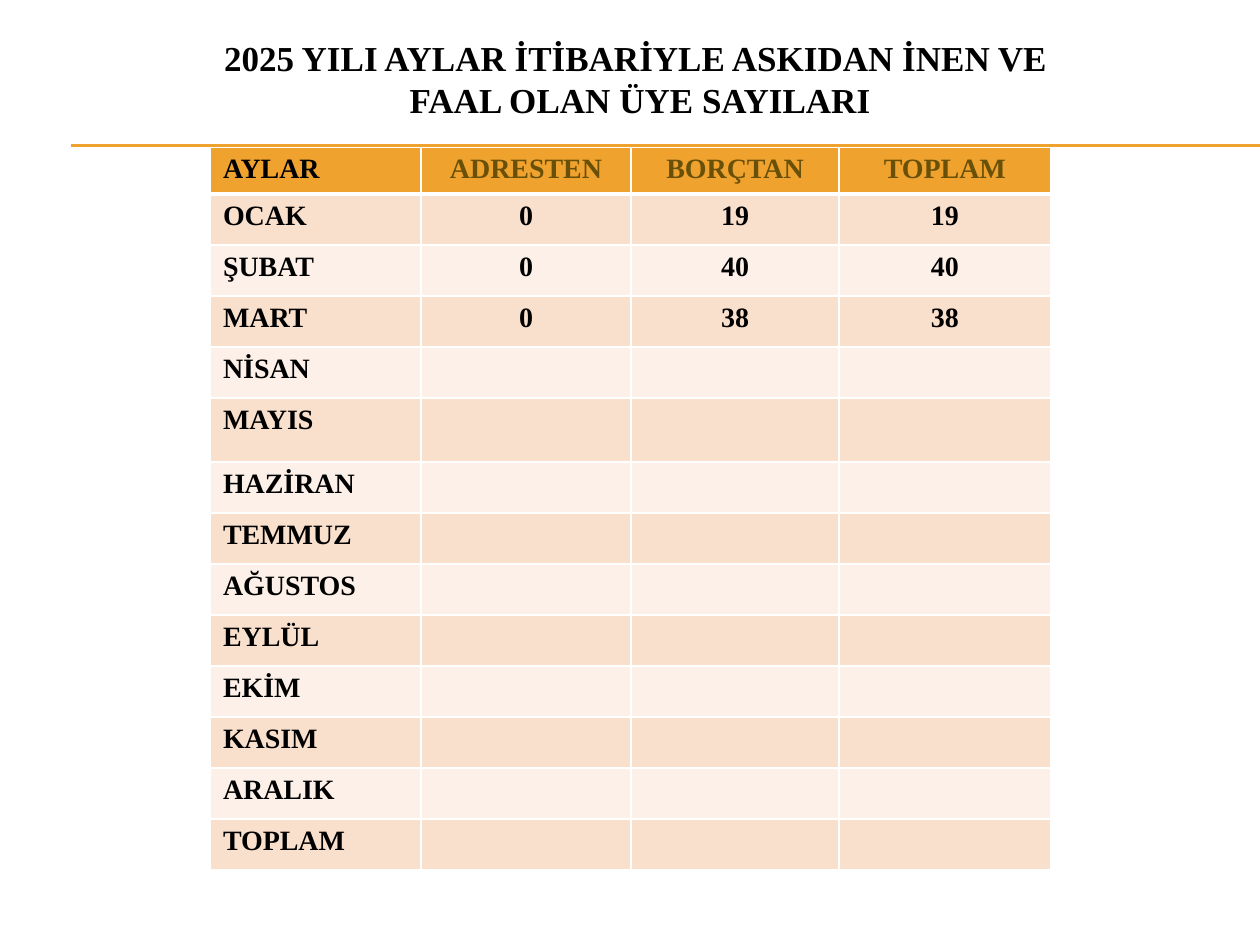
from typing import NamedTuple

from lxml.etree import SubElement
from pptx import Presentation
from pptx.dml.color import RGBColor
from pptx.enum.shapes import MSO_CONNECTOR
from pptx.enum.text import MSO_ANCHOR, PP_ALIGN
from pptx.oxml.ns import qn
from pptx.util import Inches, Pt

ORANGE = RGBColor(0xF0, 0xA2, 0x2E)
PEACH = RGBColor(0xF9, 0xE0, 0xCD)
CREAM = RGBColor(0xFC, 0xF0, 0xE8)
OLIVE = RGBColor(0x69, 0x50, 0x08)
BLACK = RGBColor(0, 0, 0)
WHITE = RGBColor(0xFF, 0xFF, 0xFF)
FONT = "Times New Roman"


class Month(NamedTuple):
    name: str
    address: str = ""
    debt: str = ""
    total: str = ""


HEADER = ("AYLAR", "ADRESTEN", "BORÇTAN", "TOPLAM")
MONTHS = [
    Month("OCAK", "0", "19", "19"),
    Month("ŞUBAT", "0", "40", "40"),
    Month("MART", "0", "38", "38"),
    *map(Month, ("NİSAN", "MAYIS", "HAZİRAN", "TEMMUZ", "AĞUSTOS",
                 "EYLÜL", "EKİM", "KASIM", "ARALIK", "TOPLAM")),
]
COL_WIDTHS = (1.67, 1.67, 1.65, 1.68)
TABLE_HEIGHT, HEADER_HEIGHT, MAY_HEIGHT = 5.74, 0.37, 0.51
MAY_ROW = 5
ROW_HEIGHT = (TABLE_HEIGHT - HEADER_HEIGHT - MAY_HEIGHT) / (len(MONTHS) - 1)


def style_paragraph(p, size: int, color: RGBColor, align: PP_ALIGN) -> None:
    p.alignment = align
    f = p.font
    f.name, f.size, f.bold = FONT, Pt(size), True
    f.color.rgb = color


def add_rule(s, y: float) -> None:
    line = s.shapes.add_connector(MSO_CONNECTOR.STRAIGHT, Inches(0.56),
                                  Inches(y), Inches(10), Inches(y))
    line.line.color.rgb = ORANGE
    line.line.width = Pt(0.75)
    SubElement(line._element.spPr, qn("a:effectLst"))


def add_borders(cell, top: float, bottom: float) -> None:
    tcPr = cell._tc.get_or_add_tcPr()
    for side, width in (("L", 1), ("R", 1), ("T", top), ("B", bottom)):
        ln = SubElement(tcPr, qn(f"a:ln{side}"), w=str(Pt(width)))
        fill = SubElement(ln, qn("a:solidFill"))
        SubElement(fill, qn("a:srgbClr"), val=str(WHITE))


def fill_cell(cell, text: str, row: int, col: int) -> None:
    add_borders(cell, top=3 if row == 1 else 1, bottom=3 if row == 0 else 1)
    cell.fill.solid()
    cell.fill.fore_color.rgb = ORANGE if row == 0 else PEACH if row % 2 else CREAM
    if text:
        cell.text = text
        style_paragraph(cell.text_frame.paragraphs[0], 16,
                        OLIVE if row == 0 and col else BLACK,
                        PP_ALIGN.CENTER if col else PP_ALIGN.LEFT)


def add_title(s, text: str) -> None:
    tf = s.shapes.add_textbox(Inches(0.33), Inches(0.16),
                              Inches(9.5), Inches(0.92)).text_frame
    tf.word_wrap = True
    tf.vertical_anchor = MSO_ANCHOR.MIDDLE
    p = tf.paragraphs[0]
    p.text = text
    style_paragraph(p, 20, BLACK, PP_ALIGN.CENTER)


def add_month_table(s) -> None:
    rows = [HEADER, *MONTHS]
    table = s.shapes.add_table(len(rows), len(HEADER), Inches(1.67), Inches(1.17),
                               Inches(sum(COL_WIDTHS)), Inches(TABLE_HEIGHT)).table
    for column, width in zip(table.columns, COL_WIDTHS):
        column.width = Inches(width)
    special_heights = {0: HEADER_HEIGHT, MAY_ROW: MAY_HEIGHT}
    for i, values in enumerate(rows):
        table.rows[i].height = Inches(special_heights.get(i, ROW_HEIGHT))
        for j, value in enumerate(values):
            fill_cell(table.cell(i, j), value, i, j)


def main() -> None:
    prs = Presentation()
    prs.slide_width, prs.slide_height = Inches(10), Inches(7.5)
    s = prs.slides.add_slide(prs.slide_layouts[6])

    # Double rule under the title
    for y in (1.15, 1.16):
        add_rule(s, y)

    # Title and monthly figures
    add_title(s, "2025 YILI AYLAR İTİBARİYLE ASKIDAN İNEN VE \vFAAL OLAN ÜYE SAYILARI")
    add_month_table(s)

    prs.save("out.pptx")


if __name__ == "__main__":
    main()
